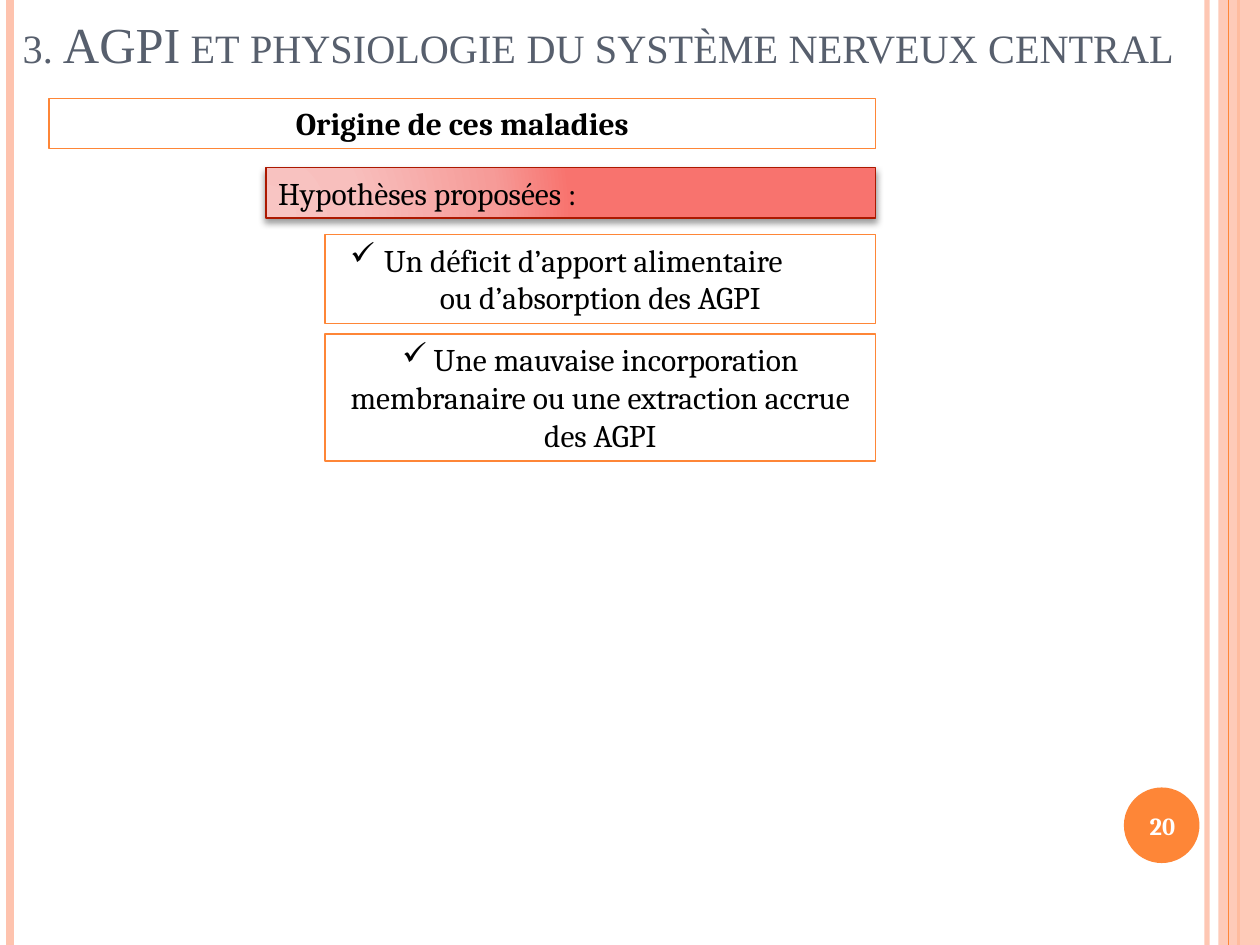
from lxml import etree
from pptx import Presentation, util as u
from pptx.dml.color import RGBColor
from pptx.enum import shapes, text
from pptx.oxml.ns import qn

# Content
TITLE = "3. AGPI et physiologie du système nerveux central"
PAGE = "20"
LEFT, CENTER = text.PP_ALIGN.LEFT, text.PP_ALIGN.CENTER
ORANGE, PEACH, SLATE, BLACK, WHITE = "FE8637", "FEC3AE", "575F6D", "000000", "FFFFFF"
RIGHT_EDGE = 6.95  # shared by all the boxes
# left, top, height, paragraphs (text, alignment, bold, hanging bullet as (margin, indent))
BOXES = [
    (0.39, 0.78, 0.4, [("Origine de ces maladies", CENTER, True, None)]),
    (2.11, 1.33, 0.4, [("Hypothèses proposées :", LEFT, False, None)]),
    (2.58, 1.86, 0.71, [("Un déficit d’apport alimentaire", LEFT, False, (0.37, -0.27)),
                        ("ou d’absorption des AGPI", CENTER, False, None)]),
    (2.58, 2.65, 1.01, [(" Une mauvaise incorporation membranaire ou une extraction "
                         "accrue des AGPI", CENTER, False, (0, 0))]),
]
HYPOTHESES = 1  # index of the highlighted box
GRADIENT = [(0, "F8C5C3"), (30, "F8BFBD"), (75, "F69B98"), (100, "F8736E")]
# x, colour, width, opacity in percent
RULES = [(9.58, PEACH, 3, 93), (0.08, PEACH, 4.5, 100), (9.83, ORANGE, 1.5, 100)]
INNER_RULE = (9.75, ORANGE, 0.75, 100)

prs = Presentation()
prs.slide_width, prs.slide_height = u.Inches(10), u.Inches(7.5)
slide = prs.slides.add_slide(prs.slide_layouts[5])


def rgb(value):
    return RGBColor.from_string(value)


def sub(parent, tag, **attributes):
    return etree.SubElement(parent, qn(tag), {k: str(v) for k, v in attributes.items()})


def set_alpha(fill, percent):
    color = next(fill.iter(qn("a:srgbClr")))
    sub(color, "a:alpha", val=percent * 1000)


def add_rule(x, color, width, opacity):
    rule = slide.shapes.add_connector(shapes.MSO_CONNECTOR.STRAIGHT,
                                      u.Inches(x), 0, u.Inches(x), prs.slide_height)
    rule.line.color.rgb = rgb(color)
    rule.line.width = u.Pt(width)
    if opacity < 100:
        set_alpha(rule.line._ln, opacity)
    sub(rule._element.spPr, "a:effectLst")


def add_shape(kind, left, top, width, height, fill=None, line=None):
    shape = slide.shapes.add_shape(kind, *map(u.Inches, (left, top, width, height)))
    shape.shadow.inherit = False
    if fill:
        shape.fill.solid()
        shape.fill.fore_color.rgb = rgb(fill)
    else:
        shape.fill.background()
    if line:
        shape.line.color.rgb = rgb(line)
        shape.line.width = u.Pt(0.75)
    else:
        shape.line.fill.background()
    return shape


def style(paragraph, size, color, bold=False, align=LEFT, font="Cambria"):
    paragraph.alignment = align
    paragraph.font.name, paragraph.font.size = font, u.Pt(size)
    paragraph.font.bold, paragraph.font.color.rgb = bold, rgb(color)


def add_check(paragraph, margin, indent):
    props = paragraph._p.get_or_add_pPr()
    props.set("marL", str(u.Inches(margin)))
    props.set("indent", str(u.Inches(indent)))
    bullet = etree.Element(qn("a:buChar"), char="✓")
    props.insert(0, bullet)


def highlight(box):
    box.line.color.rgb = rgb("AC1800")
    box.line.width = u.Pt(1)
    # Circular gradient
    box.fill.gradient()
    grad = box._element.spPr.find(qn("a:gradFill"))
    for child in list(grad):
        grad.remove(child)
    stops = sub(grad, "a:gsLst")
    for position, color in GRADIENT:
        sub(sub(stops, "a:gs", pos=position * 1000), "a:srgbClr", val=color)
    sub(sub(grad, "a:path", path="circle"), "a:fillToRect",
        l=5000, t=100000, r=120000, b=10000)
    # Soft shadow below
    effects = box._element.spPr.find(qn("a:effectLst"))
    shadow = sub(effects, "a:outerShdw", blurRad=u.Pt(4), dist=u.Pt(2),
                 dir=90 * 60000, rotWithShape=0)
    sub(sub(shadow, "a:srgbClr", val=BLACK), "a:alpha", val=40000)


# Side bands
for rule in RULES:
    add_rule(*rule)
band = add_shape(shapes.MSO_SHAPE.RECTANGLE, 9.67, 0, 0.33, 7.5, fill=PEACH)
set_alpha(band._element.spPr.find(qn("a:solidFill")), 87)
add_rule(*INNER_RULE)

# Page number
add_shape(shapes.MSO_SHAPE.OVAL, 8.92, 6.25, 0.6, 0.6, fill=ORANGE)
page = slide.shapes.add_textbox(*map(u.Inches, (8.89, 6.27, 0.67, 0.57))).text_frame
page.word_wrap = True
page.vertical_anchor = text.MSO_ANCHOR.MIDDLE
page.text = PAGE
style(page.paragraphs[0], 14, WHITE, True, CENTER)

# Title
title = slide.shapes.title
title.left, title.top, title.width, title.height = map(u.Inches, (0.08, 0.05, 9.69, 0.56))
title.text_frame.text = TITLE
title.text_frame.vertical_anchor = text.MSO_ANCHOR.TOP
heading = title.text_frame.paragraphs[0]
style(heading, 28.8, SLATE, font="Times New Roman")
heading.runs[0]._r.get_or_add_rPr().set("cap", "small")

# Boxes
for index, (left, top, height, lines) in enumerate(BOXES):
    box = add_shape(shapes.MSO_SHAPE.RECTANGLE, left, top, RIGHT_EDGE - left, height, line=ORANGE)
    if index == HYPOTHESES:
        highlight(box)
    frame = box.text_frame
    frame.word_wrap = True
    frame.vertical_anchor = text.MSO_ANCHOR.TOP
    frame.text = "\n".join(line[0] for line in lines)
    for paragraph, (_, align, bold, check) in zip(frame.paragraphs, lines):
        style(paragraph, 18, BLACK, bold, align)
        if check:
            add_check(paragraph, *check)

prs.save("out.pptx")
